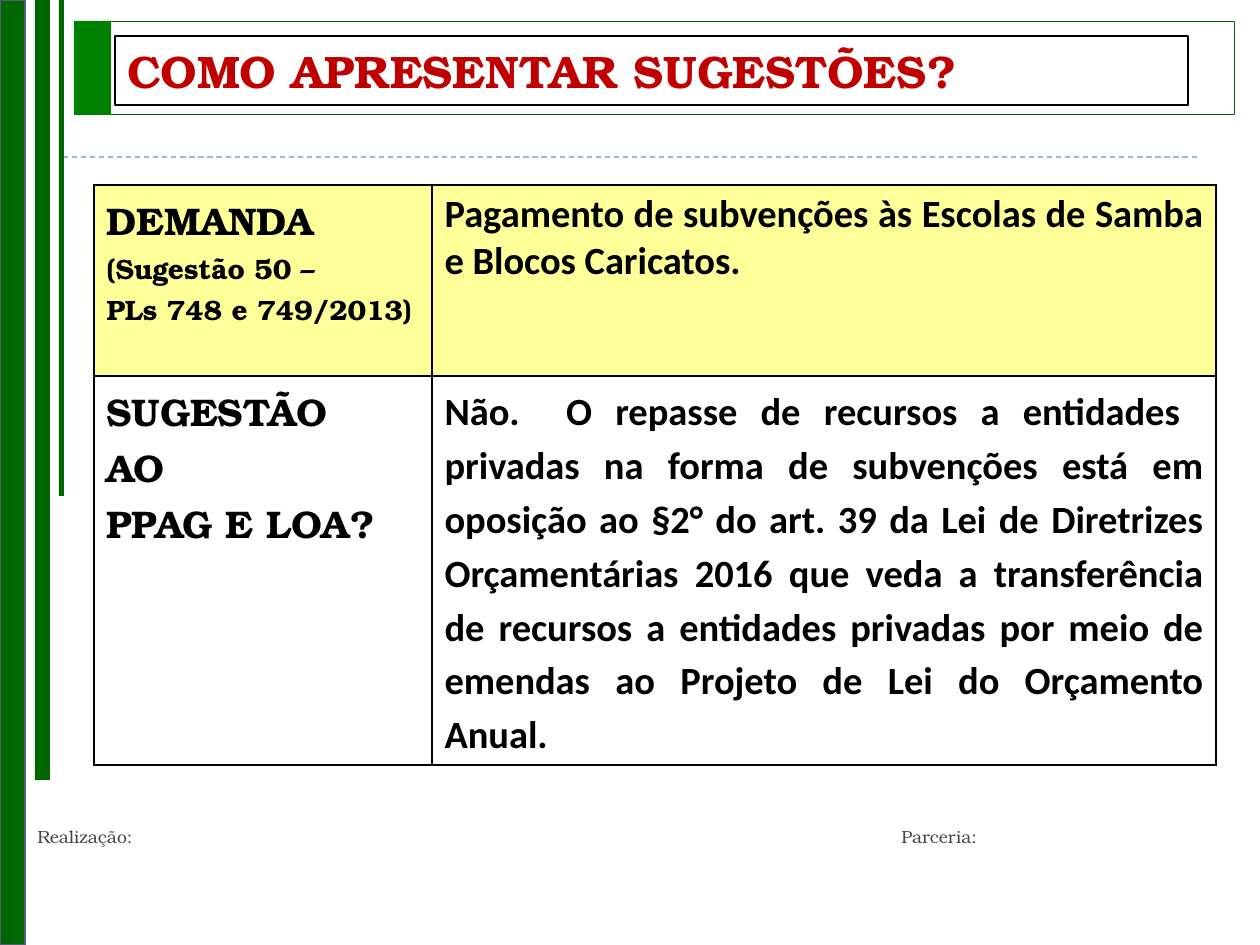
from lxml import etree
from pptx import Presentation
from pptx.dml.color import RGBColor
from pptx.enum.dml import MSO_LINE
from pptx.enum.shapes import MSO_CONNECTOR, MSO_SHAPE
from pptx.enum.text import MSO_ANCHOR, PP_ALIGN
from pptx.oxml.ns import qn
from pptx.util import Emu, Pt

DARK_GREEN = RGBColor(0x00, 0x66, 0x00)
GREEN = RGBColor(0x00, 0x80, 0x00)
SLATE = RGBColor(0x54, 0x5C, 0x79)
PALE_BLUE = RGBColor(0x9F, 0xB8, 0xCD)
GREY = RGBColor(0x46, 0x46, 0x53)
RED = RGBColor(0xC0, 0x00, 0x00)
YELLOW = RGBColor(0xFF, 0xFF, 0x99)
WHITE = RGBColor(0xFF, 0xFF, 0xFF)
BLACK = RGBColor(0x00, 0x00, 0x00)

SERIF = "TeX Gyre Bonum"
SANS = "Calibri"


def px(n):
    return Emu(round(n * 914400 / 126))


def write(tf, text, size=22, font=SERIF, color=BLACK, bold=True,
          align=PP_ALIGN.LEFT, spacing=None, new=False):
    """Write one paragraph, after the existing ones if new is set."""
    p = tf.add_paragraph() if new else tf.paragraphs[0]
    p.alignment = align
    if spacing:
        p.line_spacing = spacing
    r = p.add_run()
    r.text = text
    r.font.size = Pt(size)
    r.font.name = font
    r.font.bold = bold
    r.font.color.rgb = color
    return p


class Deck:
    def __init__(self, width, height):
        self.prs = Presentation()
        self.prs.slide_width, self.prs.slide_height = px(width), px(height)
        self.s = self.prs.slides.add_slide(self.prs.slide_layouts[6])

    def rect(self, x, y, w, h, fill=None, line=None, weight=0.75):
        sp = self.s.shapes.add_shape(MSO_SHAPE.RECTANGLE, px(x), px(y), px(w), px(h))
        sp.shadow.inherit = False
        if fill is None:
            sp.fill.background()
        else:
            sp.fill.solid()
            sp.fill.fore_color.rgb = fill
        if line is None:
            sp.line.fill.background()
        else:
            sp.line.color.rgb = line
            sp.line.width = Pt(weight)
        return sp

    def dashed_line(self, x1, x2, y):
        c = self.s.shapes.add_connector(MSO_CONNECTOR.STRAIGHT, px(x1), px(y), px(x2), px(y))
        c.line.color.rgb = PALE_BLUE
        c.line.width = Pt(0.75)
        c.line.dash_style = MSO_LINE.DASH
        etree.SubElement(c._element.spPr, qn("a:effectLst"))

    def tabbed_text(self, x, y, w, h, text, tab, **fmt):
        tf = self.s.shapes.add_textbox(px(x), px(y), px(w), px(h)).text_frame
        tf.word_wrap = True
        p = write(tf, text, **fmt)
        tabs = etree.SubElement(p._p.get_or_add_pPr(), qn("a:tabLst"))
        etree.SubElement(tabs, qn("a:tab"), pos=str(px(tab)), algn="l")

    def table(self, x, y, cols, rows, fills, content):
        """Each cell of content is a list of (text, format) paragraphs."""
        table = self.s.shapes.add_table(len(rows), len(cols), px(x), px(y),
                                        px(sum(cols)), px(sum(rows))).table
        for col, w in zip(table.columns, cols):
            col.width = px(w)
        for row, h, fill, cells in zip(table.rows, rows, fills, content):
            row.height = px(h)
            for cell, paragraphs in zip(row.cells, cells):
                self.border(cell)
                cell.fill.solid()
                cell.fill.fore_color.rgb = fill
                for i, (text, fmt) in enumerate(paragraphs):
                    write(cell.text_frame, text, new=i > 0, **fmt)

    def border(self, cell):
        tc_pr = cell._tc.get_or_add_tcPr()
        for side in ("lnL", "lnR", "lnT", "lnB"):
            ln = etree.SubElement(tc_pr, qn(f"a:{side}"), w=str(Pt(1)))
            fill = etree.SubElement(ln, qn("a:solidFill"))
            etree.SubElement(fill, qn("a:srgbClr"), val=str(BLACK))


def main():
    deck = Deck(1260, 945)

    deck.rect(35, 0, 15, 780, fill=DARK_GREEN)
    deck.dashed_line(63, 1197, 157)
    deck.rect(74, 21, 1161, 94, line=DARK_GREEN, weight=0.5)
    deck.rect(74, 21, 37, 94, fill=GREEN)
    deck.rect(0, 0, 25, 945, fill=DARK_GREEN, line=SLATE, weight=1.5)
    deck.rect(59, 0, 5, 496, fill=DARK_GREEN)
    deck.tabbed_text(25, 820, 1203, 39, "Realização:\tParceria:", 864,
                     size=10, color=GREY, bold=False)

    title = deck.rect(115, 36, 1073, 69, line=BLACK).text_frame
    title.vertical_anchor = MSO_ANCHOR.MIDDLE
    title.word_wrap = True
    write(title, "COMO APRESENTAR SUGESTÕES?", size=26, color=RED)

    head, detail = {}, {"size": 16}
    body = {"font": SANS, "align": PP_ALIGN.JUSTIFY}
    demand = [("DEMANDA", head), ("(Sugestão 50 –", detail), ("PLs 748 e 749/2013)", detail)]
    request = [("Pagamento de subvenções às Escolas de Samba e Blocos Caricatos.", body)]
    suggestion = [(text, head) for text in ("SUGESTÃO", "AO", "PPAG E LOA?")]
    answer = [("Não.  O repasse de recursos a entidades  privadas na forma de subvenções "
               "está em oposição ao §2° do art. 39 da Lei de Diretrizes Orçamentárias 2016 "
               "que veda a transferência de recursos a entidades privadas por meio de "
               "emendas ao Projeto de Lei do Orçamento Anual.", {**body, "spacing": 1.15})]
    deck.table(94, 185, cols=[338, 784], rows=[191, 389], fills=[YELLOW, WHITE],
               content=[[demand, request], [suggestion, answer]])

    deck.prs.save("out.pptx")


if __name__ == "__main__":
    main()
